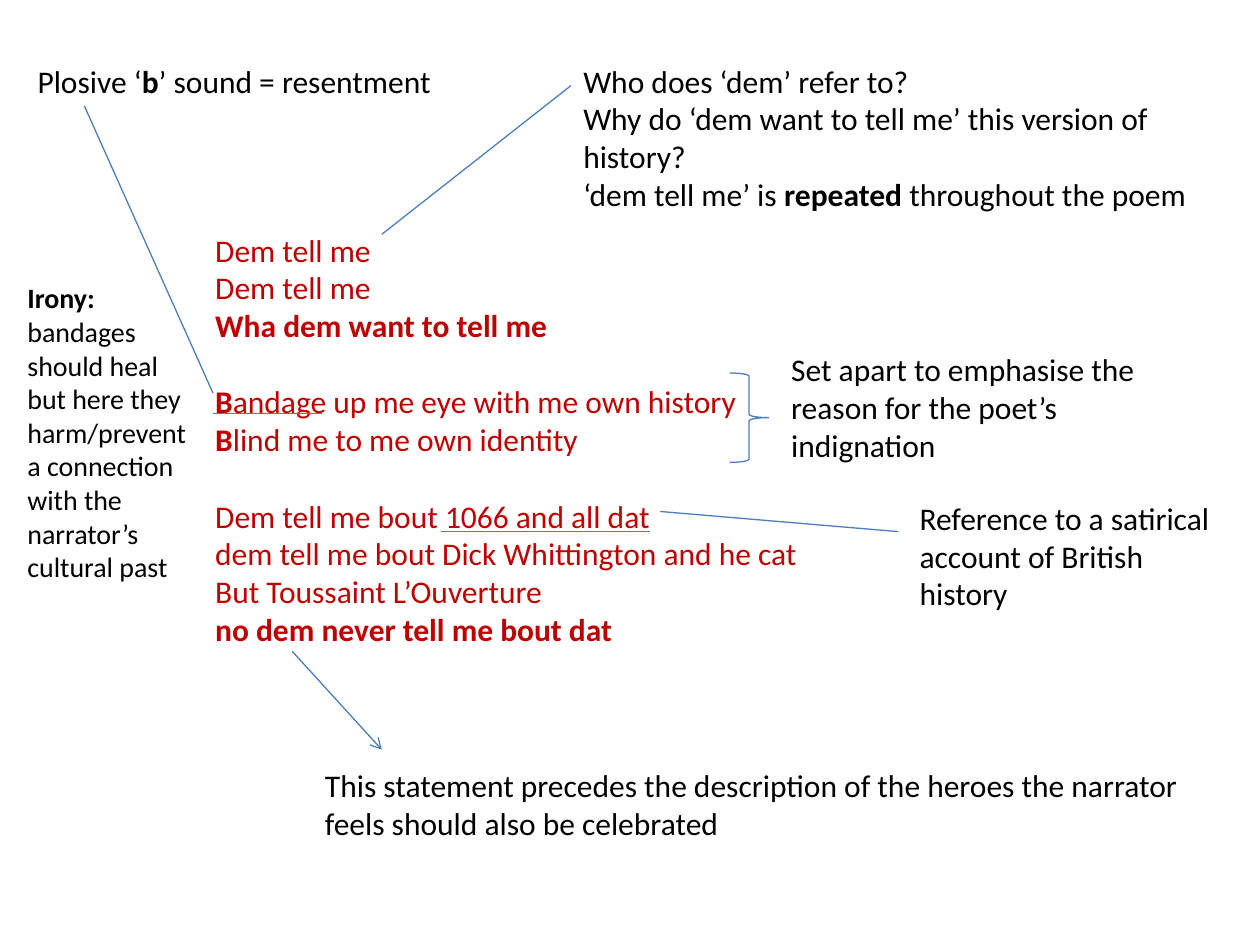
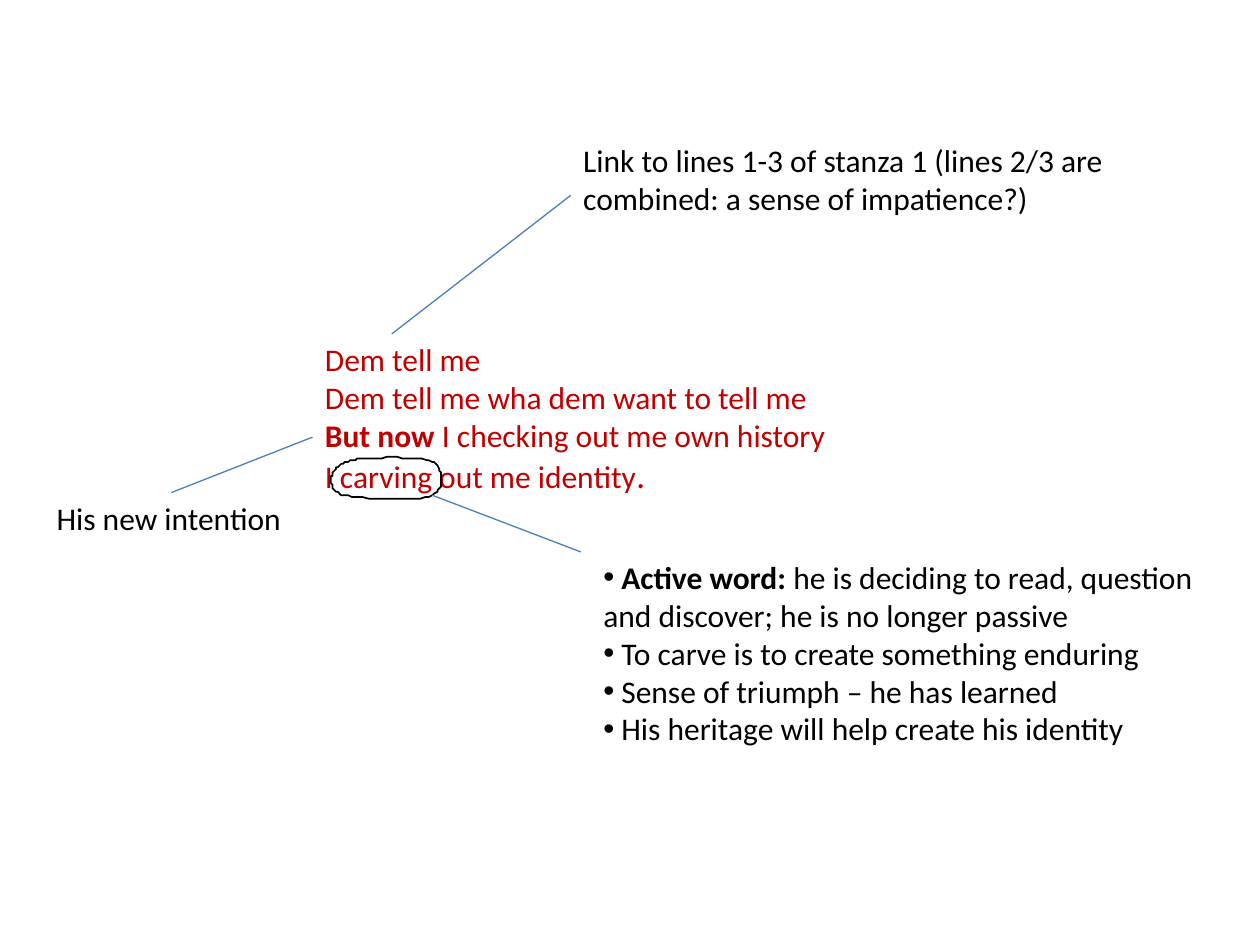
from dataclasses import dataclass

from lxml.etree import SubElement
from pptx import Presentation
from pptx.dml.color import RGBColor as RGB
from pptx.enum.shapes import MSO_CONNECTOR as Link, MSO_SHAPE as Kind
from pptx.enum.text import MSO_AUTO_SIZE as Fit
from pptx.oxml.ns import qn
from pptx.util import Pt


@dataclass(frozen=True)
class Theme:
    font: str = "Calibri"
    note: RGB = RGB(0, 0, 0)
    verse: RGB = RGB(0xC0, 0, 0)
    line: RGB = RGB(0x4B, 0x7E, 0xBC)
    small: int = 16
    body: int = 18
    large: int = 20
    thin: float = 0.75
    leading: float = 22  # height of one body line


THEME = Theme()


# Text
def write(par, text, size=THEME.body, color=THEME.note, bold=False):
    run = par.add_run()
    run.text = text
    font = run.font
    font.name, font.size, font.bold = THEME.font, Pt(size), bold
    font.color.rgb = color


def bullet(par):
    props = par._p.get_or_add_pPr()
    props.set("marL", "0")
    props.set("indent", "0")
    SubElement(props, qn("a:buFont")).set("typeface", "Arial")
    SubElement(props, qn("a:buChar")).set("char", "•")


def note(slide, box, *lines, wrap=True, dots=False, gaps=(), **form):
    """Place lines of text; words between asterisks are bold."""
    frame = slide.shapes.add_textbox(*map(Pt, box)).text_frame
    frame.word_wrap = wrap
    frame.auto_size = Fit.SHAPE_TO_FIT_TEXT
    for i, line in enumerate(lines):
        par = frame.add_paragraph() if i else frame.paragraphs[0]
        if i in gaps:
            par.space_before = Pt(THEME.leading)
        if dots:
            bullet(par)
        for j, part in enumerate(line.split("*")):
            if part:
                write(par, part, bold=j % 2 == 1, **form)
    return frame


def verse(slide, box, *stanzas):
    lines, gaps = [], []
    for stanza in stanzas:
        if lines:
            gaps.append(len(lines))
        lines += stanza
    return note(slide, box, *lines, wrap=False, gaps=gaps, color=THEME.verse)


# Marks
def stroke(shape, color=THEME.line, width=THEME.thin):
    shape.line.color.rgb = color
    shape.line.width = Pt(width)


def link(slide, start, end, arrow=False):
    line = slide.shapes.add_connector(Link.STRAIGHT, *map(Pt, start + end))
    stroke(line)
    if arrow:
        SubElement(line.line._get_or_add_ln(), qn("a:tailEnd")).set("type", "arrow")
    SubElement(line._element.spPr, qn("a:effectLst"))


def brace(slide, box):
    shape = slide.shapes.add_shape(Kind.RIGHT_BRACE, *map(Pt, box))
    shape.shadow.inherit = False
    shape.fill.background()
    stroke(shape)


def curve(start, bends, steps=16):
    """Points along a chain of cubic curves."""
    points = [start]
    for bend in bends:
        knots = (points[-1], *bend)
        for i in range(1, steps + 1):
            t = i / steps
            u = 1 - t
            mix = (u**3, 3 * u * u * t, 3 * u * t * t, t**3)
            points.append(tuple(sum(m * k[axis] for m, k in zip(mix, knots))
                                for axis in (0, 1)))
    return points


def ring(slide, start, bends):
    first, *rest = curve(start, bends)
    form = slide.shapes.build_freeform(*first, scale=Pt(1))
    form.add_line_segments(rest, close=True)
    shape = form.convert_to_shape()
    shape.shadow.inherit = False
    shape.fill.background()
    stroke(shape, THEME.note, 1)


# Slides
def opening(slide):
    verse(slide, (115.9, 128.2, 355.7, 247),
          ["Dem tell me", "Dem tell me", "*Wha dem want to tell me*"],
          ["*B*andage up me eye with me own history",
           "*B*lind me to me own identity"],
          ["Dem tell me bout 1066 and all dat",
           "dem tell me bout Dick Whittington and he cat",
           "But Toussaint L’Ouverture",
           "*no dem never tell me bout dat*"])

    # Who is 'dem'
    link(slide, (218.2, 133.9), (326.2, 49))
    note(slide, (326.2, 31.7, 380.2, 94.3),
         "Who does ‘dem’ refer to?",
         "Why do ‘dem want to tell me’ this version of history?",
         "‘dem tell me’ is *repeated* throughout the poem")

    # Bandage
    link(slide, (121.7, 236.2), (184.3, 236.2))
    brace(slide, (416.9, 213.1, 22.3, 51.1))
    note(slide, (445, 196.6, 244.1, 72.7),
         "Set apart to emphasise the reason for the poet’s indignation")
    note(slide, (8.6, 157, 108, 181.4),
         "*Irony: *bandages should heal but here they harm/prevent "
         "a connection with the narrator’s cultural past", size=THEME.small)
    link(slide, (121.7, 224.6), (48.2, 60.5))
    note(slide, (14.4, 31.7, 241.9, 28.8),
         "Plosive ‘*b*’ sound = resentment", wrap=False)

    # 1066
    link(slide, (252, 303.8), (371.5, 303.8))
    link(slide, (377.3, 292.3), (513.4, 303.8))
    note(slide, (518.4, 281.5, 193, 72.7),
         "Reference to a satirical account of British history")

    # Last line
    link(slide, (167, 372.2), (218.2, 428.4), arrow=True)
    note(slide, (178.6, 434.2, 527, 51.1),
         "This statement precedes the description of the heroes the narrator "
         "feels should also be celebrated")


def closing(slide):
    poem = verse(slide, (178.6, 190.8, 306, 118.8),
                 ["Dem tell me",
                  "Dem tell me wha dem want to tell me",
                  "*But now *I checking out me own history",
                  "I carving out me identity"])
    write(poem.paragraphs[-1], ".", size=THEME.large, color=THEME.verse)

    # Echo of the first stanza
    link(slide, (223.9, 190.8), (326.2, 111.6))
    note(slide, (326.2, 77, 362.9, 51.1),
         "Link to lines 1-3 of stanza 1 (lines 2/3 are combined: "
         "a sense of impatience?)")

    # But now
    link(slide, (178.6, 249.8), (97.9, 281.5))
    note(slide, (25.2, 281.5, 144.7, 28.8), "His new intention", wrap=False)

    # Carving
    ring(slide, (190.1, 270),
         [((192.2, 266.4), (196.6, 263.5), (205.9, 262.1)),
          ((215.3, 261.4), (239.8, 260.6), (247, 263.5)),
          ((253.4, 267.1), (254.9, 280.1), (247, 283)),
          ((238.3, 286.6), (205.9, 285.1), (196.6, 283)),
          ((187.9, 280.8), (188.6, 273.6), (190.1, 270))])
    link(slide, (247, 283), (331.9, 315.4))
    note(slide, (337.7, 315.4, 357.1, 116.6),
         "* Active word: *he is deciding to read, question and discover; "
         "he is no longer passive",
         " To carve is to create something enduring",
         " Sense of triumph – he has learned",
         " His heritage will help create his identity", dots=True)


def main():
    deck = Presentation()
    deck.slide_width, deck.slide_height = Pt(720), Pt(540)
    blank = deck.slide_layouts[6]
    for build in (opening, closing):
        build(deck.slides.add_slide(blank))
    deck.save("out.pptx")


if __name__ == "__main__":
    main()
